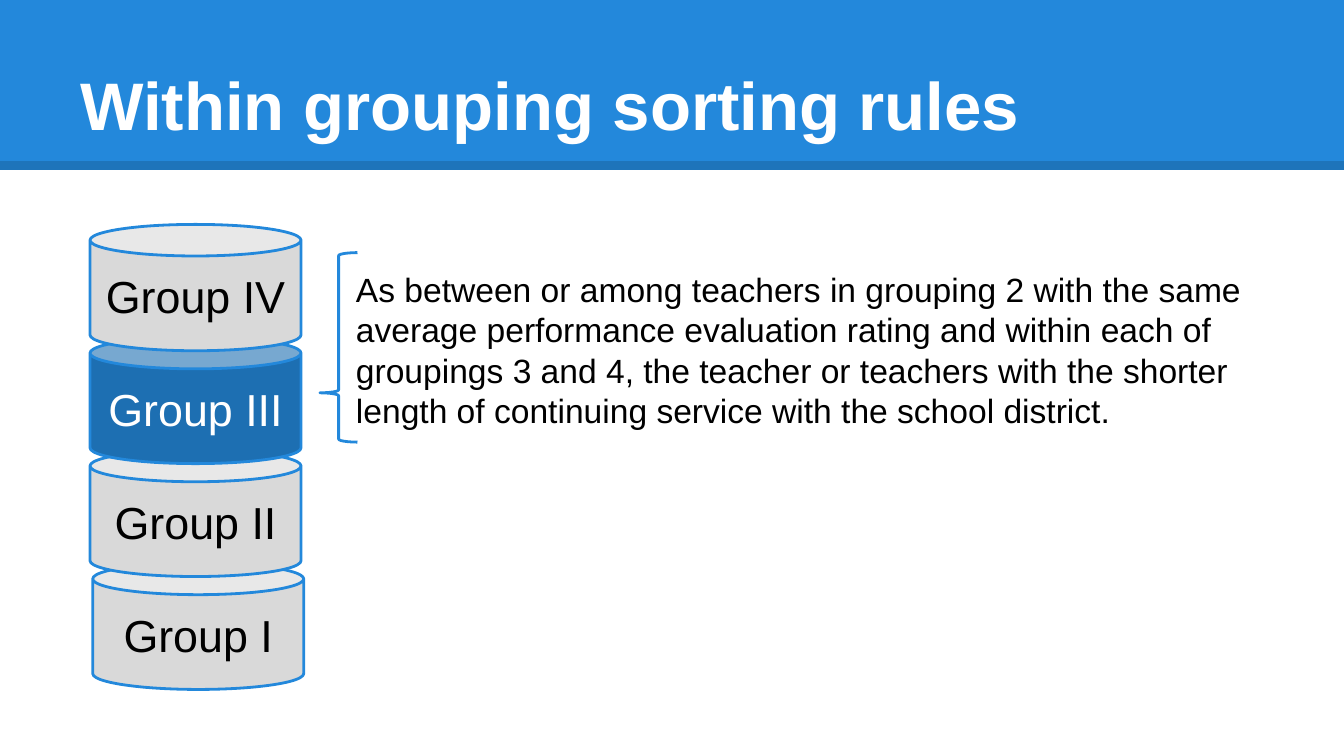
from pptx import Presentation
from pptx.dml.color import RGBColor
from pptx.enum import shapes, text
from pptx.oxml.ns import qn
from pptx.util import Inches, Pt
from lxml import etree

BLUE, DARK, GREY, BLACK, WHITE = "2388DB", "1D6FB2", "D9D9D9", "000000", "FFFFFF"
TITLE = "Within grouping sorting rules"
RULE = ("As between or among teachers in grouping 2 with the same "
        "average performance evaluation rating and within each of groupings 3 and 4, "
        "the teacher or teachers with the shorter length of continuing service "
        "with the school district.")
GROUPS = [
    ("Group I", 0.69, GREY, BLACK),
    ("Group II", 0.67, GREY, BLACK),
    ("Group III", 0.67, DARK, WHITE),
    ("Group IV", 0.67, GREY, BLACK),
]
CAN_BOTTOM, CAN_STEP, CAN_W, CAN_H = 4.19, 0.84, 1.57, 0.94
SHAPE = shapes.MSO_SHAPE
MIDDLE, BOTTOM = text.MSO_ANCHOR.MIDDLE, text.MSO_ANCHOR.BOTTOM
LEFT, CENTER = text.PP_ALIGN.LEFT, text.PP_ALIGN.CENTER


def rgb(value):
    return RGBColor.from_string(value)


def add_shape(s, kind, box, fill=None, line=None, adj=()):
    sp = s.shapes.add_shape(kind, *map(Inches, box))
    sp.shadow.inherit = False
    if fill:
        sp.fill.solid()
        sp.fill.fore_color.rgb = rgb(fill)
    else:
        sp.fill.background()
    if line:
        sp.line.color.rgb = rgb(line)
        sp.line.width = Pt(1.5)
    else:
        sp.line.fill.background()
    for i, value in enumerate(adj):
        sp.adjustments[i] = value
    return sp


def write(sp, words, size, color, anchor, align=LEFT, bold=False):
    tf = sp.text_frame
    frame = {"word_wrap": True, "vertical_anchor": anchor}
    frame.update({f"margin_{side}": Inches(0.1)
                  for side in ("left", "top", "right", "bottom")})
    for name, value in frame.items():
        setattr(tf, name, value)
    p = tf.paragraphs[0]
    p.alignment = align
    r = p.add_run()
    r.text = words
    for name, value in {"name": "Arial", "size": Pt(size), "bold": bold}.items():
        setattr(r.font, name, value)
    r.font.color.rgb = rgb(color)


def add_textbox(s, box, *args, **kwargs):
    write(s.shapes.add_textbox(*map(Inches, box)), *args, **kwargs)


prs = Presentation()
prs.slide_width = Inches(10)
prs.slide_height = prs.slide_width * 9 // 16
s = prs.slides.add_slide(prs.slide_layouts[6])

add_shape(s, SHAPE.RECTANGLE, (0, 0, 10, 1.26), BLUE)
edge = s.shapes.add_connector(shapes.MSO_CONNECTOR.STRAIGHT,
                              *map(Inches, (0, 1.23, 10, 1.23)))
edge.line.color.rgb = rgb("1E74BA")
edge.line.width = Pt(4.5)
etree.SubElement(edge._element.spPr, qn("a:effectLst"))

add_textbox(s, (2.55, 1.89, 7.15, 1.41), RULE, 18, BLACK, BOTTOM)
for i, (label, left, fill, color) in enumerate(GROUPS):
    box = (left, CAN_BOTTOM - i * CAN_STEP, CAN_W, CAN_H)
    can = add_shape(s, SHAPE.CAN, box, fill, BLUE, (0.25,))
    write(can, label, 24, color, MIDDLE, CENTER)
add_shape(s, SHAPE.LEFT_BRACE, (2.38, 1.88, 0.28, 1.41), line=BLUE, adj=(0.08, 0.74))
add_textbox(s, (0.5, 0.23, 9, 0.94), TITLE, 36, WHITE, BOTTOM, bold=True)

prs.save("out.pptx")
